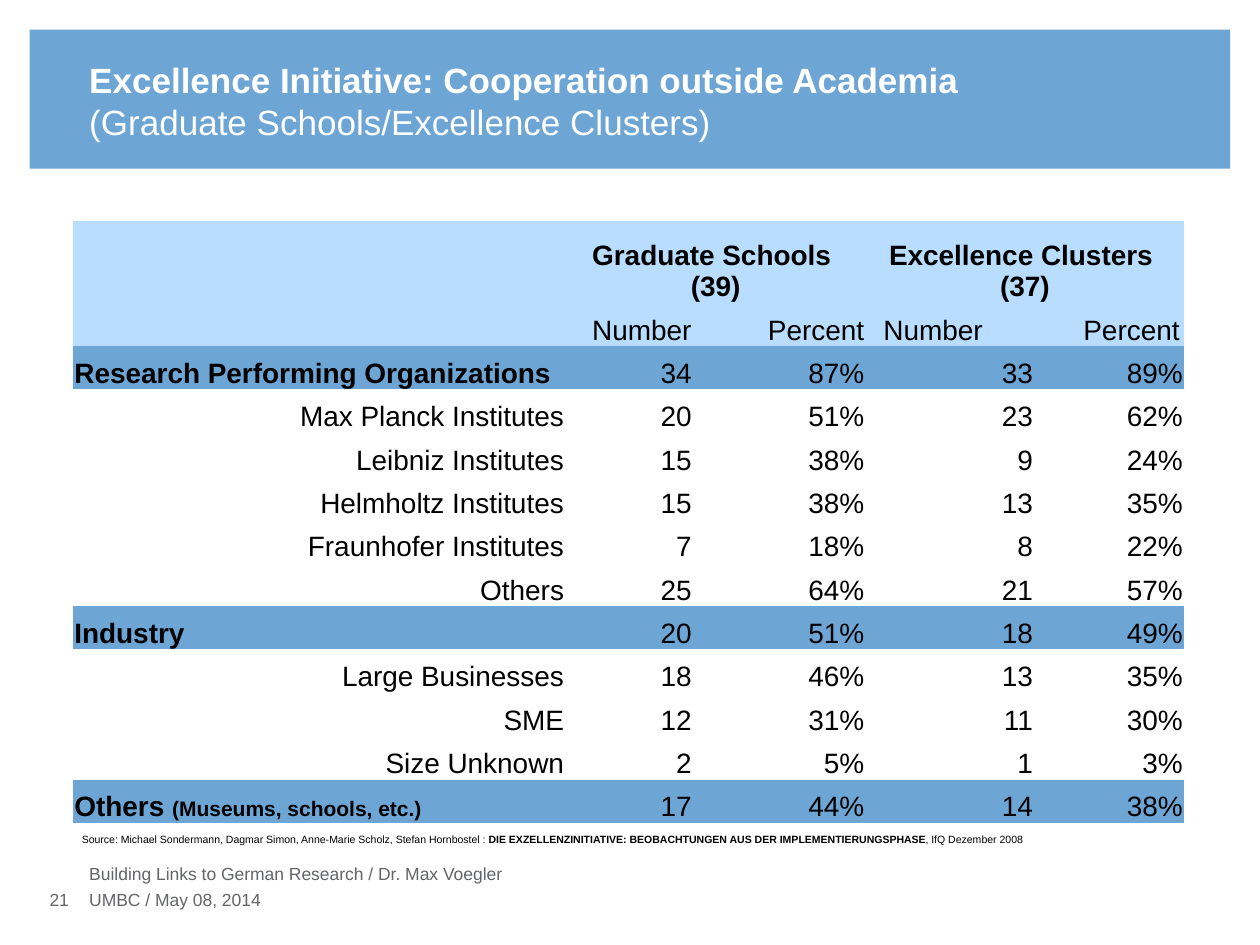
from dataclasses import dataclass

import pptx
import pptx.dml.color
import pptx.enum.shapes
import pptx.enum.text
import pptx.oxml
import pptx.oxml.ns
import pptx.util

Cm = pptx.util.Cm
Pt = pptx.util.Pt
LEFT = pptx.enum.text.PP_ALIGN.LEFT
CENTER = pptx.enum.text.PP_ALIGN.CENTER
RIGHT = pptx.enum.text.PP_ALIGN.RIGHT


@dataclass(frozen=True)
class Theme:
    font: str = "Arial"
    blue: str = "6DA5D5"
    pale: str = "B9DDFF"
    white: str = "FFFFFF"
    black: str = "000000"
    grey: str = "646567"
    title: int = 20
    body: int = 16
    remark: int = 12
    footer: int = 10
    source: int = 6


THEME = Theme()
NO_STYLE = "{2D5ABB26-0587-4C30-8999-92F81FD0307C}"
COLUMN_WIDTHS = (9.93, 2.57, 3.48, 3.4, 3.02)
HEADER_HEIGHT = 1.65
TABLE_HEIGHT = 12.14

# Label, graduate schools (number, percent), excellence clusters (number, percent)
GROUPS = {"Research Performing Organizations", "Industry", "Others "}
ROWS = [
    ("Research Performing Organizations", 34, 87, 33, 89),
    ("Max Planck Institutes", 20, 51, 23, 62),
    ("Leibniz Institutes", 15, 38, 9, 24),
    ("Helmholtz Institutes", 15, 38, 13, 35),
    ("Fraunhofer Institutes", 7, 18, 8, 22),
    ("Others", 25, 64, 21, 57),
    ("Industry", 20, 51, 18, 49),
    ("Large Businesses", 18, 46, 13, 35),
    ("SME", 12, 31, 11, 30),
    ("Size Unknown", 2, 5, 1, 3),
    ("Others ", 17, 44, 14, 38),
]


def rgb(color):
    return pptx.dml.color.RGBColor.from_string(color)


def add_span(para, text, size, color=THEME.black, bold=False):
    span = para.add_run()
    span.text = text
    span.font.name = THEME.font
    span.font.size = Pt(size)
    span.font.bold = bold
    span.font.color.rgb = rgb(color)


def add_band(page, left, top, width, height):
    band = page.shapes.add_shape(
        pptx.enum.shapes.MSO_SHAPE.RECTANGLE, Cm(left), Cm(top), Cm(width), Cm(height))
    band.shadow.inherit = False
    band.fill.solid()
    band.fill.fore_color.rgb = rgb(THEME.blue)
    band.line.fill.background()


def add_box(page, left, top, width, height, inset=0.0, inset_top=0.0, wrap=True):
    """Add a text box and return its first paragraph."""
    box = page.shapes.add_textbox(Cm(left), Cm(top), Cm(width), Cm(height))
    frame = box.text_frame
    frame.word_wrap = wrap
    frame.margin_left = frame.margin_right = Cm(inset)
    frame.margin_top = frame.margin_bottom = Cm(inset_top)
    return frame.paragraphs[0]


def fill_cell(cell, color=None):
    cell.vertical_anchor = pptx.enum.text.MSO_ANCHOR.BOTTOM
    cell.margin_left = cell.margin_right = cell.margin_top = Cm(0.03)
    cell.margin_bottom = 0
    if color:
        cell.fill.solid()
        cell.fill.fore_color.rgb = rgb(color)
    else:
        cell.fill.background()


def write_cell(cell, text, align=RIGHT, bold=False):
    """Write one paragraph per line and return the last one."""
    for index, line in enumerate(text.split("\n")):
        para = cell.text_frame.add_paragraph() if index else cell.text_frame.paragraphs[0]
        para.alignment = align
        add_span(para, line, THEME.body, bold=bold)
    return para


def add_tab_stop(para, position):
    tabs = pptx.oxml.parse_xml(
        f'<a:tabLst {pptx.oxml.ns.nsdecls("a")}><a:tab pos="{Cm(position)}" algn="l"/></a:tabLst>')
    para._p.get_or_add_pPr().append(tabs)


def add_header(table):
    for row in (0, 1):
        for column in range(len(COLUMN_WIDTHS)):
            fill_cell(table.cell(row, column), THEME.pale)

    for column, text in ((1, "Graduate Schools \n(39)"), (3, "Excellence Clusters \n(37)")):
        table.cell(0, column).merge(table.cell(0, column + 1))
        write_cell(table.cell(0, column), text, CENTER, bold=True)

    write_cell(table.cell(1, 1), "Number")
    write_cell(table.cell(1, 2), "Percent")
    pair = table.cell(1, 3)
    pair.merge(table.cell(1, 4))
    pair.margin_left = Cm(0.36)
    add_tab_stop(write_cell(pair, "Number\tPercent", LEFT), 4.03)


def add_figures(table):
    for row, (label, *values) in enumerate(ROWS, start=2):
        is_group = label in GROUPS
        for column in range(len(COLUMN_WIDTHS)):
            fill_cell(table.cell(row, column), THEME.blue if is_group else None)
        para = write_cell(table.cell(row, 0), label, LEFT if is_group else RIGHT, is_group)
        if label == "Others ":
            add_span(para, "(Museums, schools, etc.)", THEME.remark, bold=True)
        for column, value in enumerate(values, start=1):
            write_cell(table.cell(row, column), f"{value}%" if column % 2 == 0 else str(value))


def add_cooperation_table(page):
    row_count = len(ROWS) + 2
    holder = page.shapes.add_table(
        row_count, len(COLUMN_WIDTHS), Cm(1.47), Cm(4.45),
        Cm(sum(COLUMN_WIDTHS)), Cm(TABLE_HEIGHT))
    table = holder.table
    table.first_row = table.horz_banding = False
    table._tbl.tblPr.find(pptx.oxml.ns.qn("a:tableStyleId")).text = NO_STYLE
    for column, width in zip(table.columns, COLUMN_WIDTHS):
        column.width = Cm(width)
    for index, row in enumerate(table.rows):
        row.height = Cm((TABLE_HEIGHT - HEADER_HEIGHT) / (row_count - 1) if index else HEADER_HEIGHT)
    add_header(table)
    add_figures(table)


def main():
    deck = pptx.Presentation()
    deck.slide_width, deck.slide_height = Cm(25.4), Cm(19.05)
    page = deck.slides.add_slide(deck.slide_layouts[6])

    # Title band
    add_band(page, 0.6, 0.6, 24.2, 2.8)
    para = add_box(page, 1.8, 1.17, 22, 0.76, wrap=False)
    para.line_spacing = Pt(24)
    add_span(para, "Excellence Initiative: Cooperation outside Academia",
             THEME.title, THEME.white, bold=True)
    para.add_line_break()
    add_span(para, "(Graduate Schools/Excellence Clusters)", THEME.title, THEME.white)

    # Table and its source
    add_cooperation_table(page)
    para = add_box(page, 1.4, 16.66, 20.57, 0.51, inset=0.25, inset_top=0.13)
    add_span(para, "Source: Michael Sondermann, Dagmar Simon, Anne-Marie Scholz, "
                   "Stefan Hornbostel : ", THEME.source)
    add_span(para, "DIE EXZELLENZINITIATIVE: BEOBACHTUNGEN AUS DER IMPLEMENTIERUNGSPHASE",
             THEME.source, bold=True)
    add_span(para, ", IfQ Dezember 2008", THEME.source)

    # Footer
    for left, top, width, align, text in (
        (0.3, 17.93, 1.09, RIGHT, "21"),
        (1.8, 17.93, 17.65, LEFT, "UMBC / May 08, 2014"),
        (1.8, 17.4, 17.65, LEFT, "Building Links to German Research / Dr. Max Voegler"),
    ):
        para = add_box(page, left, top, width, 0.6)
        para.alignment = align
        add_span(para, text, THEME.footer, THEME.grey)

    deck.save("out.pptx")


if __name__ == "__main__":
    main()
